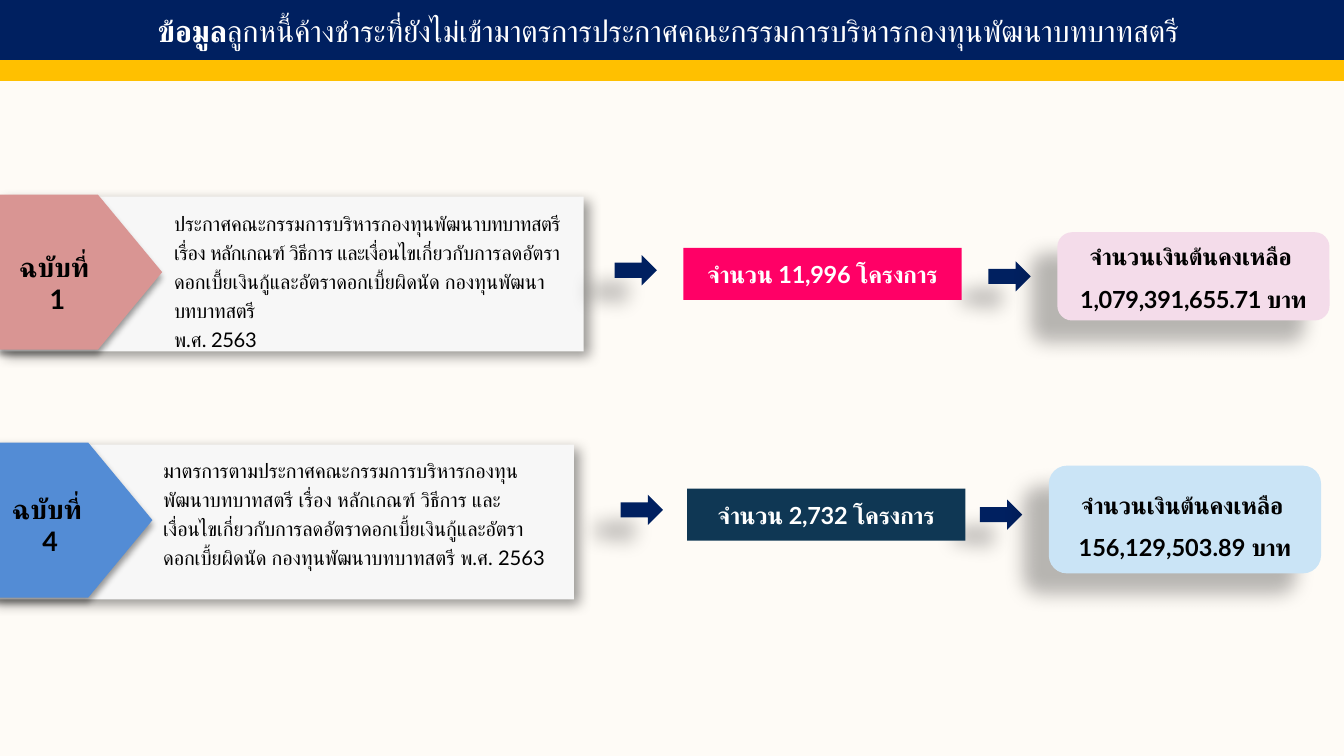
import lxml.etree
import pptx
import pptx.dml.color
import pptx.enum.lang
import pptx.enum.shapes
import pptx.enum.text
import pptx.oxml
import pptx.oxml.ns
import pptx.util

SHAPES = pptx.enum.shapes.MSO_SHAPE
ANCHORS = pptx.enum.text.MSO_ANCHOR
CELL = pptx.util.Inches(0.1)
COLUMNS, ROWS = 111.1, 62.5
NAVY, GOLD, WHITE, BLACK = "002060", "FFC000", "FFFFFF", "000000"
CARD_SHADOW = (40, 7.5, 4, 42)
TAG_SHADOW = (40, 4, 3, 90)
DEEP_SHADOW = (28, 11.8, 19.7, 141)


def color(value):
    return pptx.dml.color.RGBColor.from_string(value)


def grid(*cells):
    return [round(cell * CELL) for cell in cells]


def write(shape, paragraphs, size=14, fill=BLACK, bold=False, tight=0, centered=True,
          spacings=(), anchor=ANCHORS.TOP, grow=False):
    frame = shape.text_frame
    frame.word_wrap = True
    frame.vertical_anchor = anchor
    sizing = pptx.enum.text.MSO_AUTO_SIZE
    frame.auto_size = sizing.SHAPE_TO_FIT_TEXT if grow else sizing.NONE
    alignment = pptx.enum.text.PP_ALIGN
    for index, runs in enumerate(paragraphs):
        paragraph = frame.paragraphs[0] if index == 0 else frame.add_paragraph()
        paragraph.alignment = alignment.CENTER if centered else alignment.LEFT
        if spacings:
            paragraph.line_spacing = spacings[index]
        for text, changes in runs:
            for number, line in enumerate(text.split("\n")):
                if number:
                    paragraph.add_line_break()
                run = paragraph.add_run()
                run.text = line
                font = run.font
                font.name = "Lato"
                font.size = pptx.util.Pt(size)
                font.bold = changes.get("bold", bold)
                font.color.rgb = color(fill)
                font.language_id = pptx.enum.lang.MSO_LANGUAGE_ID.THAI
                properties = run._r.get_or_add_rPr()
                properties.set("spc", str(round(changes.get("tight", tight) * 100)))
                complex_font = lxml.etree.SubElement(properties, pptx.oxml.ns.qn("a:cs"))
                complex_font.set("typeface", "Lato")


class Board:
    def __init__(self, presentation):
        self.slide = presentation.slides.add_slide(presentation.slide_layouts[6])
        self.shapes = self.slide.shapes

    def background(self, value):
        self.slide.background.fill.solid()
        self.slide.background.fill.fore_color.rgb = color(value)

    def open_group(self):
        self.shapes = self.slide.shapes.add_group_shape().shapes

    def close_group(self):
        self.shapes = self.slide.shapes

    def finish(self, shape, fill, shadow=None, outlined=False):
        shape.fill.solid()
        shape.fill.fore_color.rgb = color(fill)
        if outlined:
            shape.line.color.rgb = color(fill)
            shape.line.width = pptx.util.Pt(1)
        else:
            shape.line.fill.background()
        shape.shadow.inherit = False
        if shadow:
            opacity, blur, distance, angle = shadow
            effects = shape._element.spPr.find(pptx.oxml.ns.qn("a:effectLst"))
            effects.append(pptx.oxml.parse_xml(
                f'<a:outerShdw {pptx.oxml.ns.nsdecls("a")} blurRad="{round(blur * 12700)}" '
                f'dist="{round(distance * 12700)}" dir="{angle * 60000}" algn="ctr" '
                f'rotWithShape="0"><a:srgbClr val="{BLACK}">'
                f'<a:alpha val="{opacity * 1000}"/></a:srgbClr></a:outerShdw>'))
        return shape

    def block(self, kind, place, fill, shadow=None, outlined=False):
        shape = self.shapes.add_shape(kind, *grid(*place))
        return self.finish(shape, fill, shadow, outlined)

    def tag(self, left, top, fill):
        width, shoulder, height = 13.5, 8.2, 12.8
        corners = [(shoulder, 0), (width, height / 2), (shoulder, height), (0, height)]
        builder = self.shapes.build_freeform(*grid(left, top))
        builder.add_line_segments([grid(left + x, top + y) for x, y in corners], close=True)
        return self.finish(builder.convert_to_shape(), fill, TAG_SHADOW)

    def text(self, place, paragraphs, **style):
        write(self.shapes.add_textbox(*grid(*place)), paragraphs, **style)

    def arrow(self, left, top):
        self.block(SHAPES.RIGHT_ARROW, (left, top, 3.5, 2.5), NAVY, DEEP_SHADOW)

    def measure(self, row):
        self.open_group()
        left, top = row["card"]
        self.block(SHAPES.RECTANGLE, (left, top, 48.3, 12.8), "F7F7F7", CARD_SHADOW)
        self.tag(left - 0.05, top - 0.15, row["tag_fill"])
        self.text((*row["label"], 11.3, 6), [[(f"ฉบับที่ \n{row['number']}", {})]],
                  size=16, bold=True)
        self.text(row["body_place"], [row["body"]], size=12, centered=False,
                  spacings=[1.2], grow=row["grow"])
        self.close_group()
        for place in row["arrows"]:
            self.arrow(*place)
        count = self.block(SHAPES.RECTANGLE, (*row["count_place"], 23, 4.3), row["count_fill"])
        write(count, [[(f"จำนวน {row['count']} โครงการ", {})]], fill=WHITE, bold=True,
              tight=-0.2, anchor=ANCHORS.MIDDLE)
        balance = self.block(SHAPES.ROUNDED_RECTANGLE, row["balance_place"],
                             row["balance_fill"], DEEP_SHADOW)
        write(balance, [[("จำนวนเงินต้นคงเหลือ ", {})], row["balance"]], bold=True,
              tight=-0.2, spacings=row["balance_spacings"], grow=True)


MEASURES = [
    dict(number=1, card=(-0.05, 16.25), tag_fill="D99593", label=(-0.9, 20.2),
         body_place=(13.4, 16.6, 34.2, 10.7), grow=False,
         body=[("ประกาศคณะกรรมการบริหารกองทุนพัฒนา", {}),
               ("บทบาทสตรี เรื่อง หลักเกณฑ์ วิธีการ และเงื่อนไข", {"tight": -0.3}),
               ("เกี่ยวกับการลดอัตราดอกเบี้ยเงินกู้และอัตราดอกเบี้ยผิดนัด กองทุนพัฒนา", {}),
               ("บทบาทสตรี \nพ.ศ. 2563", {"tight": -0.2})],
         arrows=[(50.8, 21.1), (81.7, 21.6)],
         count_place=(56.5, 20.5), count_fill="FF0066", count="11,996",
         balance_place=(87.4, 19.2, 22.5, 7.3), balance_fill="F4DCEA",
         balance=[("1,079,391,655.71 บาท", {})], balance_spacings=(1.0, 1.5)),
    dict(number=4, card=(-0.85, 36.75), tag_fill="538CD5", label=(-1.5, 40.2),
         body_place=(12.5, 37, 34.2, 13), grow=True,
         body=[("มาตรการตามประกาศคณะกรรมการบริหารกองทุนพัฒนาบทบาทสตรี เรื่อง หลักเกณฑ์ วิธีการ "
                "และเงื่อนไขเกี่ยวกับการลดอัตราดอกเบี้ยเงินกู้และอัตราดอกเบี้ยผิดนัด "
                "กองทุนพัฒนาบทบาทสตรี พ.ศ. 2563", {})],
         arrows=[(51.3, 40.9), (81, 41.3)],
         count_place=(56.8, 40.4), count_fill="0F3754", count="2,732",
         balance_place=(86.7, 38.5, 22.5, 8.9), balance_fill="CAE4F6",
         balance=[("156,129,503.89 ", {"tight": 0}), ("บาท", {})],
         balance_spacings=(1.5, 1.5)),
]


def main():
    presentation = pptx.Presentation()
    presentation.slide_width, presentation.slide_height = grid(COLUMNS, ROWS)
    board = Board(presentation)
    board.background("FEFBF6")
    for row in MEASURES:
        board.measure(row)
    header = board.block(SHAPES.RECTANGLE, (0, 0, COLUMNS, 5.1), NAVY, outlined=True)
    write(header, [[("ข้อมูล", {"bold": True}),
                    ("ลูกหนี้ค้างชำระที่ยังไม่เข้ามาตรการประกาศ"
                     "คณะกรรมการบริหารกองทุนพัฒนาบทบาทสตรี ", {})]],
          size=18, fill=WHITE, anchor=ANCHORS.MIDDLE)
    board.block(SHAPES.RECTANGLE, (0, 5, COLUMNS, 1.6), GOLD, outlined=True)
    presentation.save("out.pptx")


if __name__ == "__main__":
    main()
